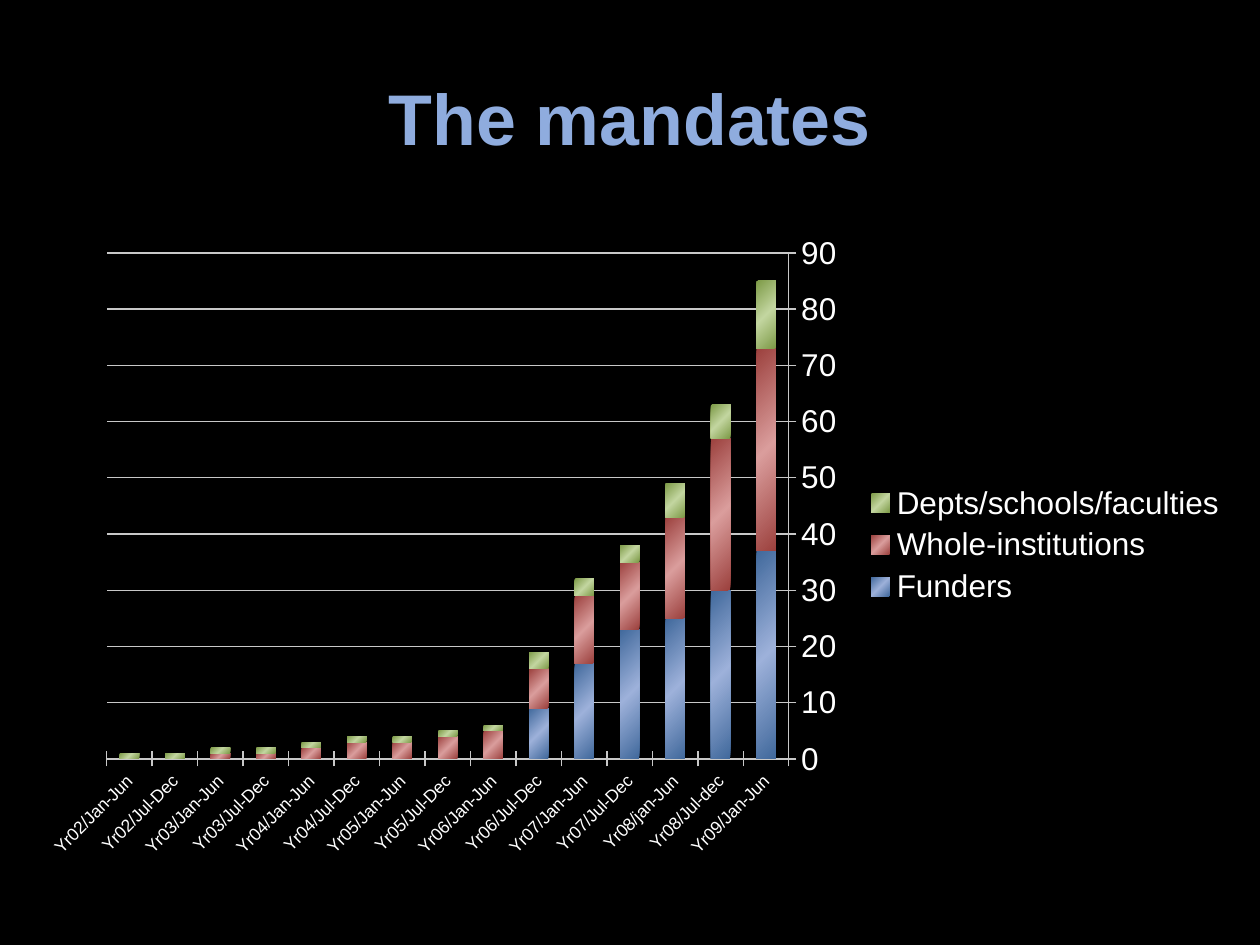
from dataclasses import dataclass

from lxml.etree import SubElement
from pptx import Presentation
from pptx.chart.data import CategoryChartData
from pptx.dml.color import RGBColor
from pptx.enum.chart import XL_CHART_TYPE, XL_LEGEND_POSITION, XL_TICK_MARK
from pptx.enum.text import MSO_ANCHOR, PP_ALIGN
from pptx.oxml import parse_xml
from pptx.oxml.ns import nsdecls, qn
from pptx.util import Inches, Pt


@dataclass(frozen=True)
class Theme:
    """Colours, font and type sizes of the slide."""
    font: str = "Arial"
    background: str = "000000"
    title: str = "8FACDE"
    text: str = "FFFFFF"
    line: str = "C8C8C8"
    title_size: int = 41
    chart_size: int = 18
    category_size: int = 10


THEME = Theme()

PERIODS = [
    "Yr09/Jan-Jun", "Yr08/Jul-dec", "Yr08/jan-Jun", "Yr07/Jul-Dec", "Yr07/Jan-Jun",
    "Yr06/Jul-Dec", "Yr06/Jan-Jun", "Yr05/Jul-Dec", "Yr05/Jan-Jun", "Yr04/Jul-Dec",
    "Yr04/Jan-Jun", "Yr03/Jul-Dec", "Yr03/Jan-Jun", "Yr02/Jul-Dec", "Yr02/Jan-Jun",
]
MANDATES = [
    ("Funders", [37, 30, 25, 23, 17, 9] + [0] * 9, "41699C", "9DB1DA"),
    ("Whole-institutions", [36, 27, 18, 12, 12, 7, 5, 4, 3, 3, 2, 1, 1, 0, 0],
     "9C413E", "DA9D9C"),
    ("Depts/schools/faculties", [12, 6, 6, 3, 3, 3] + [1] * 9, "7E9B48", "C3D6A0"),
]


def add_title(page, left, top, width, height):
    """Place the centred slide title."""
    frame = page.shapes.add_textbox(left, top, width, height).text_frame
    frame.word_wrap = True
    frame.vertical_anchor = MSO_ANCHOR.MIDDLE
    para = frame.paragraphs[0]
    para.text = "The mandates"
    para.alignment = PP_ALIGN.CENTER
    para.font.name = THEME.font
    para.font.size = Pt(THEME.title_size)
    para.font.bold = True
    para.font.color.rgb = RGBColor.from_string(THEME.title)


def set_sheen(series, dark, light):
    """Fill a series with a diagonal gradient that is light in the middle."""
    stops = "".join(
        f'<a:gs pos="{position}"><a:srgbClr val="{color}"/></a:gs>'
        for position, color in ((0, dark), (50000, light), (100000, dark))
    )
    properties = series.format.fill and series._element.get_or_add_spPr()
    properties.append(parse_xml(
        f'<a:gradFill {nsdecls("a")}><a:gsLst>{stops}</a:gsLst>'
        '<a:lin ang="2700000" scaled="0"/></a:gradFill>'
    ))


def set_plot_area(chart, left, top, width, height):
    """Fix the inner plot area as fractions of the chart."""
    plot_area = chart._chartSpace.chart.plotArea
    for old in plot_area.findall(qn("c:layout")):
        plot_area.remove(old)
    layout = parse_xml(f'<c:layout {nsdecls("c")}/>')
    plot_area.insert(0, layout)
    manual = SubElement(layout, qn("c:manualLayout"))
    settings = {"layoutTarget": "inner", "xMode": "edge", "yMode": "edge",
                "x": left, "y": top, "w": width, "h": height}
    for name, value in settings.items():
        SubElement(manual, qn(f"c:{name}")).set("val", str(value))


def style_axes(chart):
    """Reverse the periods and style both axes."""
    periods, counts = chart.category_axis, chart.value_axis
    line_color = RGBColor.from_string(THEME.line)
    for axis in (periods, counts):
        axis.major_tick_mark = XL_TICK_MARK.CROSS
        axis.format.line.color.rgb = line_color
        axis.format.line.width = Pt(0.75)
    periods.reverse_order = True
    periods.tick_labels.font.size = Pt(THEME.category_size)
    periods._element.find(qn("c:txPr")).find(qn("a:bodyPr")).set("rot", "-2700000")
    counts.minimum_scale, counts.maximum_scale, counts.major_unit = 0, 90, 10
    counts.has_major_gridlines = True
    counts.major_gridlines.format.line.color.rgb = line_color
    counts.major_gridlines.format.line.width = Pt(0.75)


def add_mandate_chart(page, left, top, width, height):
    """Place the stacked columns of mandates by half-year."""
    data = CategoryChartData()
    data.categories = PERIODS
    for name, values, _, _ in MANDATES:
        data.add_series(name, values)
    chart = page.shapes.add_chart(
        XL_CHART_TYPE.COLUMN_STACKED, left, top, width, height, data
    ).chart
    chart.has_title = False
    chart.font.name = THEME.font
    chart.font.size = Pt(THEME.chart_size)
    chart.font.color.rgb = RGBColor.from_string(THEME.text)
    chart.has_legend = True
    chart.legend.position = XL_LEGEND_POSITION.RIGHT
    chart.legend.include_in_layout = False
    plot = chart.plots[0]
    plot.vary_by_categories = False
    plot.overlap = 100
    plot.gap_width = 135
    for series, (_, _, dark, light) in zip(plot.series, MANDATES):
        set_sheen(series, dark, light)
    style_axes(chart)
    set_plot_area(chart, 0.07, 0.05, 0.56, 0.78)


def main():
    """Build and save the slide."""
    deck = Presentation()
    deck.slide_width, deck.slide_height = Inches(10), Inches(7.5)
    page = deck.slides.add_slide(deck.slide_layouts[6])
    page.background.fill.solid()
    page.background.fill.fore_color.rgb = RGBColor.from_string(THEME.background)
    add_title(page, Inches(0.5), Inches(0.3), Inches(9), Inches(1.25))
    add_mandate_chart(page, Inches(0.17), Inches(1.75), Inches(9.67), Inches(5.15))
    deck.save("out.pptx")


if __name__ == "__main__":
    main()
